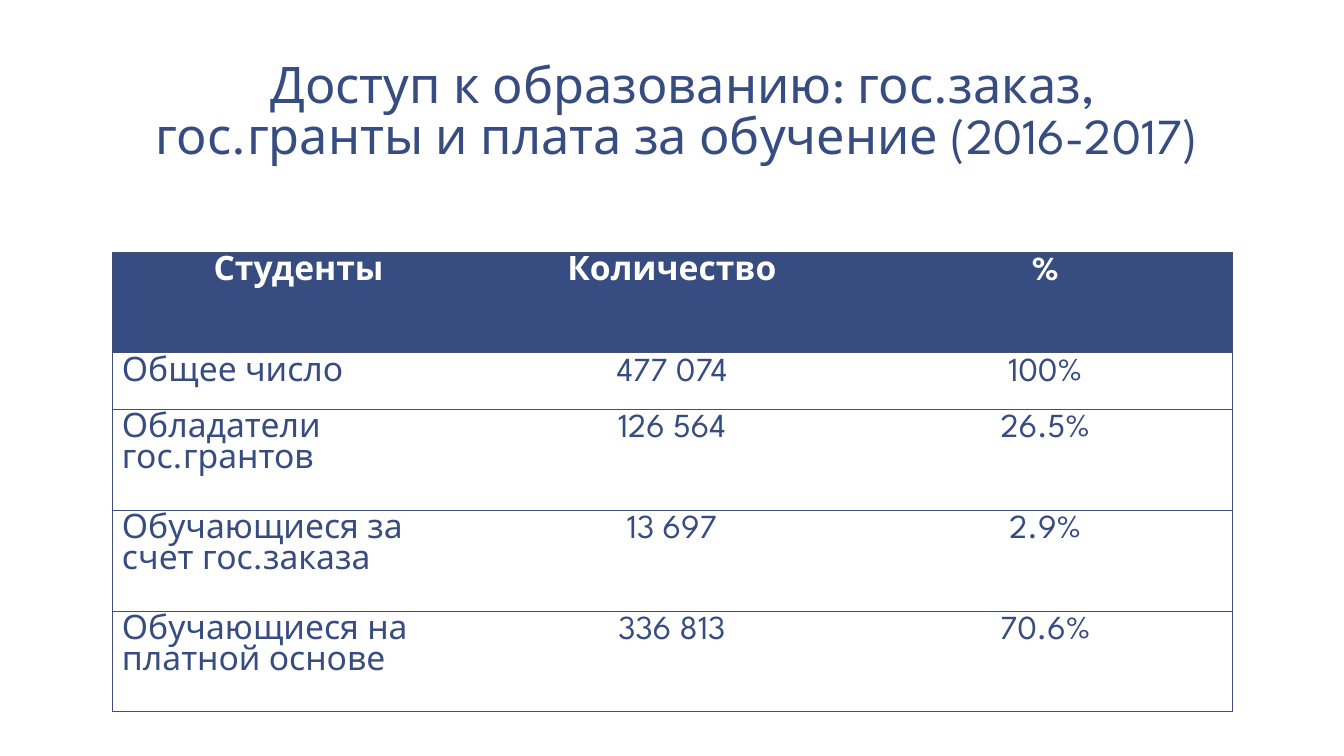
import pptx
import pptx.dml.color
import pptx.enum.text
import pptx.oxml
import pptx.oxml.ns
import pptx.util
from pptx.util import Inches

NAVY = pptx.dml.color.RGBColor(0x37, 0x4C, 0x81)
BORDER = pptx.dml.color.RGBColor(0x41, 0x4E, 0x77)
WHITE = pptx.dml.color.RGBColor(0xFF, 0xFF, 0xFF)
FONT = "League Spartan"
CENTER = pptx.enum.text.PP_ALIGN.CENTER
LEFT = pptx.enum.text.PP_ALIGN.LEFT

TITLE = "Доступ к образованию: гос.заказ, гос.гранты и плата за обучение (2016-2017) "
ROWS = [
    ("Студенты", "Количество", "%"),
    ("Общее число", "477 074", "100%"),
    ("Обладатели гос.грантов", "126 564", "26.5%"),
    ("Обучающиеся за счет гос.заказа", "13 697", "2.9%"),
    ("Обучающиеся на платной основе", "336 813", "70.6%"),
]
ROW_HEIGHTS = [1, 0.56, 1, 1, 1]


def write_text(frame, text, size, color, align, bold=False):
    para = frame.paragraphs[0]
    para.alignment = align
    span = para.add_run()
    span.text = text
    span.font.name = FONT
    span.font.size = pptx.util.Pt(size)
    span.font.bold = bold
    span.font.color.rgb = color
    return para


def set_borders(cell, visible_sides):
    properties = cell._tc.get_or_add_tcPr()
    namespace = pptx.oxml.ns.nsdecls("a")
    for index, side in enumerate("LRTB"):
        paint = "<a:noFill/>"
        if side in visible_sides:
            paint = f'<a:solidFill><a:srgbClr val="{BORDER}"/></a:solidFill>'
        line = pptx.oxml.parse_xml(
            f'<a:ln{side} {namespace} w="{pptx.util.Pt(0.5)}">{paint}</a:ln{side}>')
        properties.insert(index, line)


def add_title(page):
    title = page.shapes.title
    title.left, title.top = Inches(1.22), Inches(0.21)
    title.width, title.height = Inches(11.11), Inches(1.5)
    frame = title.text_frame
    frame.word_wrap = True
    frame.vertical_anchor = pptx.enum.text.MSO_ANCHOR.BOTTOM
    frame.margin_left = frame.margin_right = Inches(0.13)
    frame.margin_top = frame.margin_bottom = Inches(0.07)
    para = write_text(frame, TITLE, 36, NAVY, CENTER)
    para.line_spacing = 0.85


def add_student_table(page):
    columns = len(ROWS[0])
    table = page.shapes.add_table(
        len(ROWS), columns, Inches(1.11), Inches(2.5),
        Inches(11.11), Inches(sum(ROW_HEIGHTS))).table
    table.horz_banding = False
    for row, height in zip(table.rows, ROW_HEIGHTS):
        row.height = Inches(height)
    for row_index, values in enumerate(ROWS):
        header = row_index == 0
        for column_index, value in enumerate(values):
            cell = table.cell(row_index, column_index)
            if header:
                cell.fill.solid()
                cell.fill.fore_color.rgb = NAVY
            else:
                cell.fill.background()
            sides = "TB"
            if column_index == 0:
                sides += "L"
            if column_index == columns - 1:
                sides += "R"
            set_borders(cell, sides)
            align = CENTER if header or column_index else LEFT
            write_text(cell.text_frame, value, 24,
                       WHITE if header else NAVY, align, header)


def main():
    """Build the slide on access to education and save it."""
    deck = pptx.Presentation()
    deck.slide_width, deck.slide_height = Inches(13.33), Inches(7.5)
    page = deck.slides.add_slide(deck.slide_layouts[5])
    add_title(page)
    add_student_table(page)
    deck.save("out.pptx")


if __name__ == "__main__":
    main()
